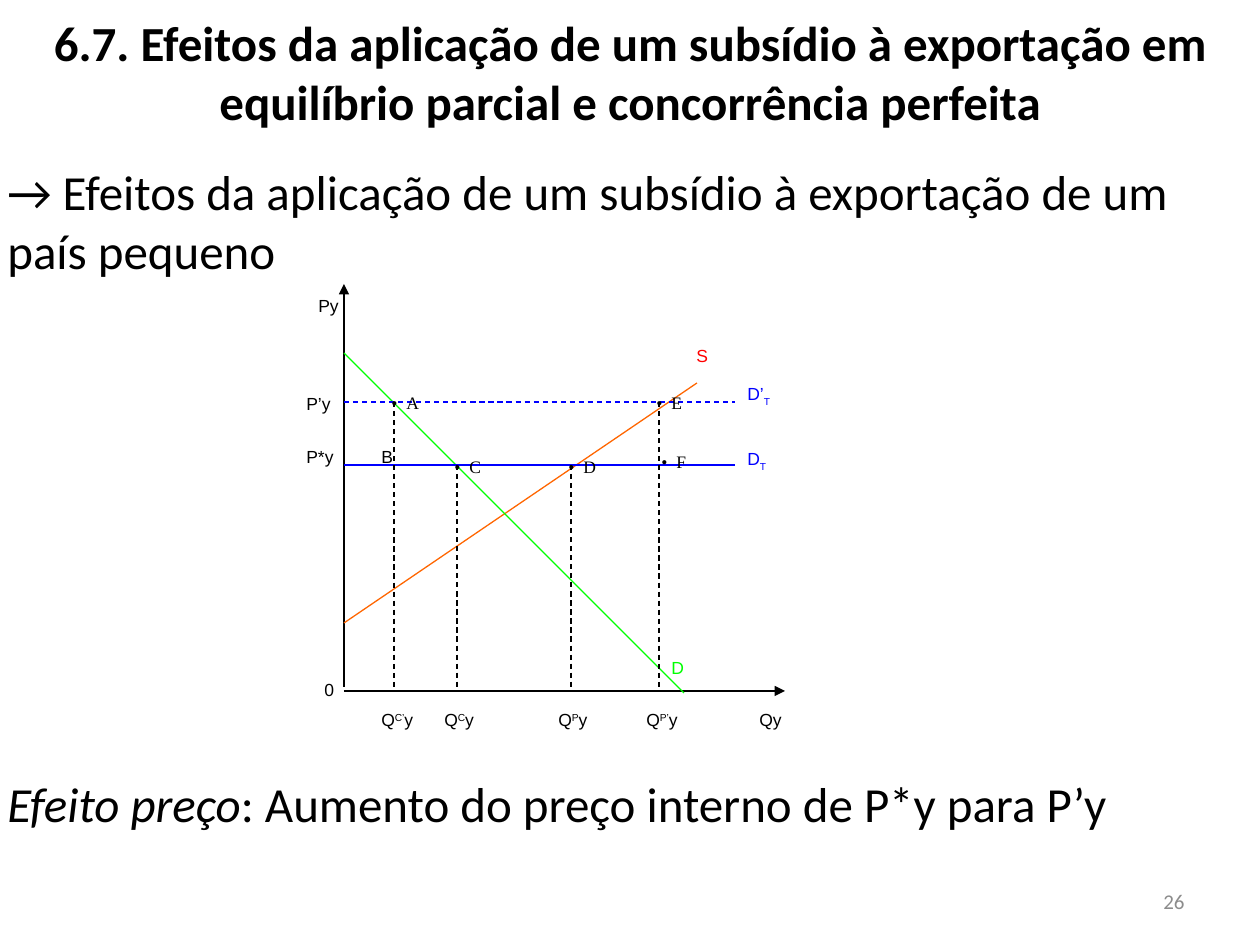
from typing import NamedTuple

from lxml import etree
from pptx import Presentation
from pptx.dml.color import RGBColor
from pptx.enum import dml, shapes, text
from pptx.oxml.ns import qn
from pptx.util import Emu, Pt

PX = 914400 / 126
BLACK = RGBColor(0x00, 0x00, 0x00)
GREY = RGBColor(0x8C, 0x8C, 0x8C)
ORANGE = RGBColor(0xFF, 0x66, 0x00)
GREEN = RGBColor(0x00, 0xFF, 0x00)
BLUE = RGBColor(0x00, 0x00, 0xFF)
RED = RGBColor(0xFF, 0x00, 0x00)

# Coordinates shared by the curves, guides and labels of the diagram
AXIS_X, AXIS_Y = 344, 691
SUBSIDY_Y, WORLD_Y = 402, 465
PRICE_END = 735
QUANTITY_Y = 703


class Run(NamedTuple):
    text: str
    italic: bool = False
    baseline: int = 0


class Line(NamedTuple):
    x1: int
    y1: int
    x2: int
    y2: int
    color: RGBColor = BLACK
    dashed: bool = False
    arrow: bool = False


class Label(NamedTuple):
    x: int
    y: int
    runs: tuple[Run, ...]
    color: RGBColor = BLACK


class Point(NamedTuple):
    x: int
    y: int
    name: str
    indent: int = 10


LINES = [
    Line(AXIS_X, 687, AXIS_X, 284, arrow=True),
    Line(AXIS_X, AXIS_Y, 785, AXIS_Y, arrow=True),
    Line(AXIS_X, 623, 697, 383, ORANGE),
    Line(AXIS_X, 353, 684, 693, GREEN),
    Line(AXIS_X, WORLD_Y, PRICE_END, WORLD_Y, BLUE),
    Line(AXIS_X, SUBSIDY_Y, PRICE_END, SUBSIDY_Y, BLUE, dashed=True),
    *(Line(x, y, x, 692, dashed=True)
      for x, y in ((659, SUBSIDY_Y), (571, WORLD_Y), (457, WORLD_Y), (394, SUBSIDY_Y))),
]

POINTS = [
    Point(634, 386, "E"),
    Point(634, 445, "F", indent=15),
    Point(546, 450, "D"),
    Point(432, 450, "C"),
    Point(369, 386, "A"),
]

LABELS = [
    Label(369, 440, (Run("B"),)),
    Label(294, 440, (Run("P*y"),)),
    Label(294, 387, (Run("P’y"),)),
    Label(306, 289, (Run("Py"),)),
    Label(747, QUANTITY_Y, (Run("Qy"),)),
    *(Label(x, QUANTITY_Y, (Run("Q"), Run(mark, baseline=30), Run("y")))
      for x, mark in ((634, "P’"), (546, "P"), (432, "C"), (369, "C’"))),
    Label(312, 673, (Run("0"),)),
    Label(659, 651, (Run("D"),), GREEN),
    Label(735, 442, (Run("D"), Run("T", baseline=-30)), BLUE),
    Label(735, 377, (Run("D’"), Run("T", baseline=-30)), BLUE),
    Label(684, 339, (Run("S"),), RED),
]


def px(n: int) -> Emu:
    return Emu(round(n * PX))


def add_text(slide, box: tuple[int, int, int, int], runs: tuple[Run, ...], *,
             font: str = "Calibri", size: int = 28, color: RGBColor = BLACK,
             bold: bool = False, align=text.PP_ALIGN.LEFT,
             anchor=text.MSO_ANCHOR.TOP, grow: bool = False):
    """Add a text box and return its only paragraph."""
    tf = slide.shapes.add_textbox(*map(px, box)).text_frame
    tf.word_wrap = True
    tf.vertical_anchor = anchor
    if grow:
        tf.auto_size = text.MSO_AUTO_SIZE.SHAPE_TO_FIT_TEXT
    p = tf.paragraphs[0]
    p.alignment = align
    for run in runs:
        r = p.add_run()
        r.text = run.text
        r.font.name, r.font.size = font, Pt(size)
        r.font.bold, r.font.italic = bold, run.italic
        r.font.color.rgb = color
        if run.baseline:
            r._r.get_or_add_rPr().set("baseline", str(run.baseline * 1000))
    return p


def add_line(slide, line: Line) -> None:
    sp = slide.shapes.add_connector(
        shapes.MSO_CONNECTOR.STRAIGHT, *map(px, line[:4]))
    sp.line.color.rgb = line.color
    sp.line.width = Pt(0.75)
    if line.dashed:
        sp.line.dash_style = dml.MSO_LINE.DASH
    if line.arrow:
        etree.SubElement(sp.line._get_or_add_ln(), qn("a:tailEnd"), type="triangle")
    etree.SubElement(sp._element.spPr, qn("a:effectLst"))


def add_label(slide, label: Label) -> None:
    add_text(slide, (label.x, label.y, 101, 38), label.runs,
             font="Arial", size=10, color=label.color)


def add_point(slide, point: Point) -> None:
    """Add a dot and its letter, spaced by a hanging indent."""
    p = add_text(slide, (point.x, point.y, 101, 38), (Run(f"•\t{point.name}"),),
                 font="Times New Roman", size=10)
    hang = 15
    pPr = p._p.get_or_add_pPr()
    pPr.set("marL", str(px(point.indent + hang)))
    pPr.set("indent", str(px(-hang)))


def main() -> None:
    prs = Presentation()
    prs.slide_width, prs.slide_height = px(1260), px(945)
    slide = prs.slides.add_slide(prs.slide_layouts[6])
    middle = text.MSO_ANCHOR.MIDDLE

    add_text(slide, (0, 6, 1260, 131),
             (Run("6.7. Efeitos da aplicação de um subsídio à exportação em "
                  "equilíbrio parcial e concorrência perfeita"),),
             bold=True, align=text.PP_ALIGN.CENTER, grow=True)
    add_text(slide, (903, 876, 294, 50), (Run("26"),), size=12, color=GREY,
             align=text.PP_ALIGN.RIGHT, anchor=middle)
    add_text(slide, (-5, 155, 1260, 131),
             (Run("→ Efeitos da aplicação de um subsídio à exportação de um "
                  "país pequeno"),), anchor=middle, grow=True)
    add_text(slide, (-5, 767, 1260, 72),
             (Run("Efeito preço", italic=True),
              Run(": Aumento do preço interno de P*y para P’y")),
             anchor=middle, grow=True)

    for line in LINES:
        add_line(slide, line)
    for point in POINTS:
        add_point(slide, point)
    for label in LABELS:
        add_label(slide, label)

    prs.save("out.pptx")


if __name__ == "__main__":
    main()
